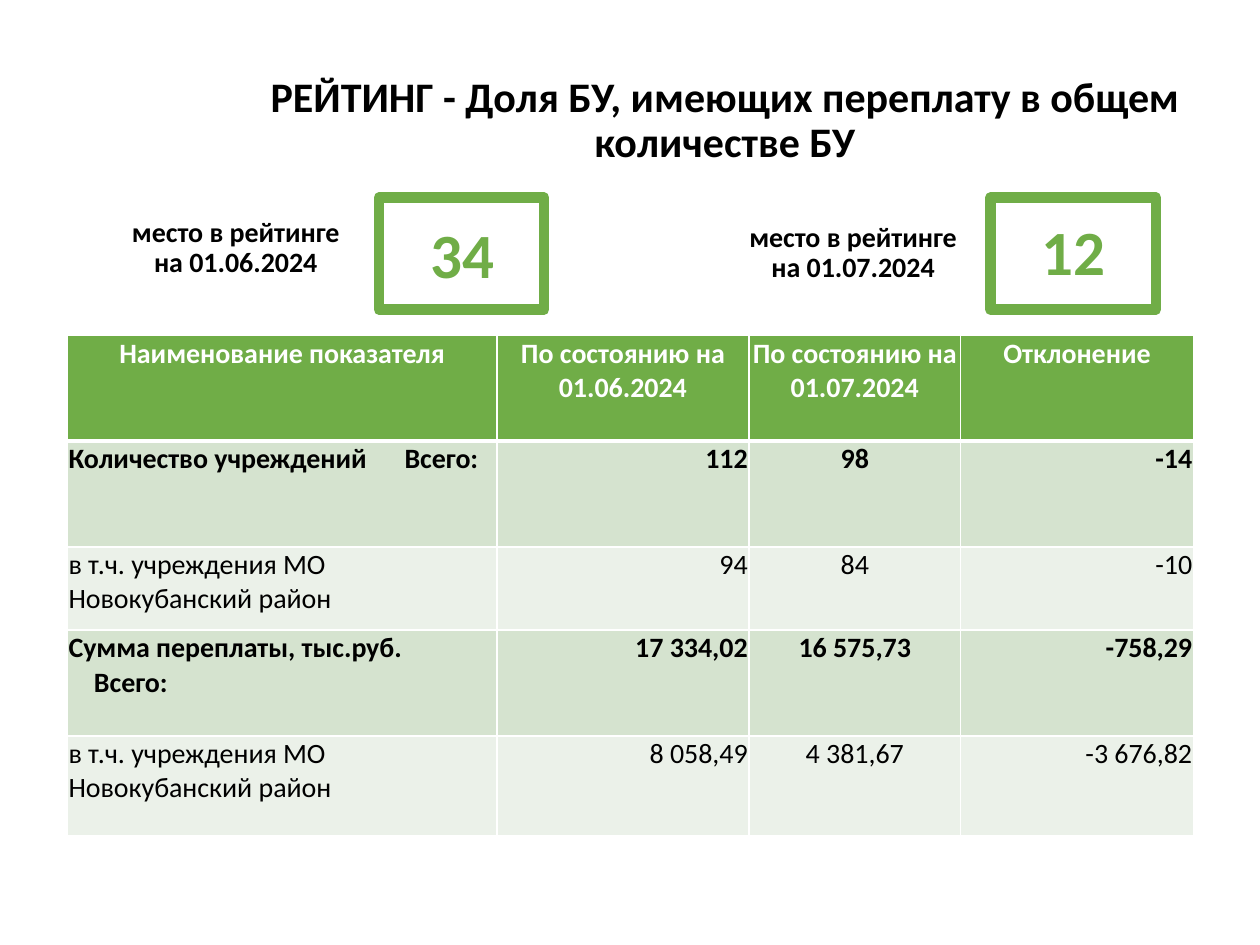
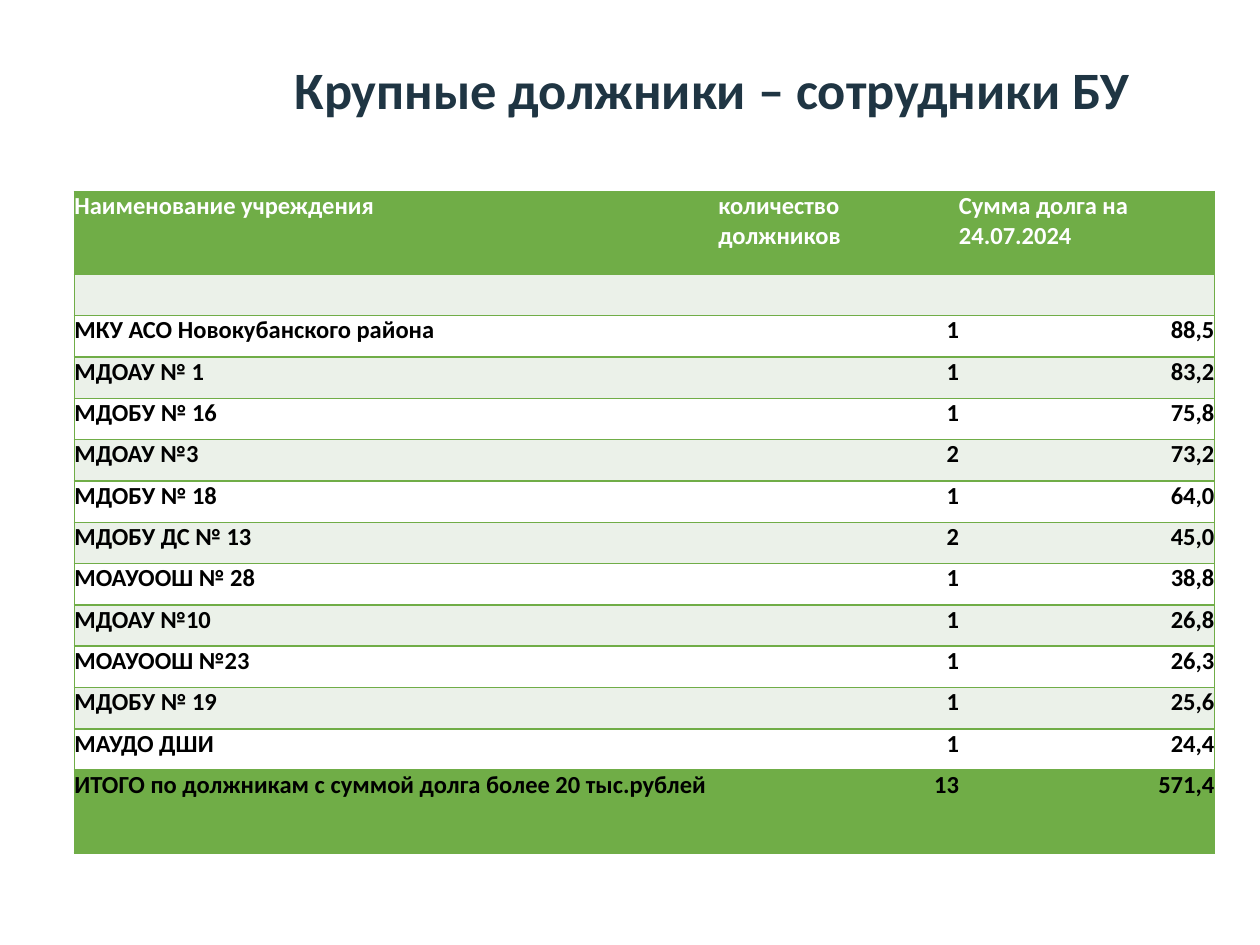
from lxml import etree
from pptx import Presentation
from pptx.dml.color import RGBColor
from pptx.enum.shapes import MSO_SHAPE
from pptx.enum.text import MSO_ANCHOR, MSO_AUTO_SIZE, PP_ALIGN
from pptx.oxml.ns import qn
from pptx.util import Pt

LEFT, CENTER, RIGHT = PP_ALIGN.LEFT, PP_ALIGN.CENTER, PP_ALIGN.RIGHT
MIDDLE, TOP = MSO_ANCHOR.MIDDLE, MSO_ANCHOR.TOP
NO_AUTOFIT = MSO_AUTO_SIZE.NONE
RECTANGLE = MSO_SHAPE.RECTANGLE

GREEN = RGBColor(0x70, 0xAD, 0x47)
BAND = RGBColor(0xD5, 0xE3, 0xCF)
PALE = RGBColor(0xEB, 0xF1, 0xE9)
WHITE = RGBColor(0xFF, 0xFF, 0xFF)
BLACK = RGBColor(0x00, 0x00, 0x00)
NAVY = RGBColor(0x1F, 0x35, 0x43)

FONT = "Calibri"
TITLE_ONLY = 5
PLAIN_TABLE_STYLE = "{2D5ABB26-0587-4C30-8999-92F81FD0307C}"

# Rating table
RATING_WIDTHS = [245.5, 144, 121, 133]
RATING_HEIGHTS = [60.5, 60.5, 47.5, 60.5, 57]
RATING_ALIGNS = [LEFT, RIGHT, CENTER, RIGHT]
RATING_ROWS = [
    ("Наименование показателя", "По состоянию на 01.06.2024",
     "По состоянию на 01.07.2024", "Отклонение"),
    ("Количество учреждений\tВсего:", "112", "98", "-14"),
    ("в т.ч. учреждения МО Новокубанский район", "94", "84", "-10"),
    ("Сумма переплаты, тыс.руб.\v\tВсего:", "17 334,02", "16 575,73", "-758,29"),
    ("в т.ч. учреждения МО Новокубанский район", "8 058,49", "4 381,67", "-3 676,82"),
]
TOTAL_TABS = {1: 192, 3: 14.5}  # row: position of "Всего:"

# Debtors table
DEBTOR_WIDTHS = [368, 137.5, 146]
DEBTOR_ROW_HEIGHT = 23.63
DEBTOR_ROWS = [
    ("Наименование учреждения", "количество должников", "Сумма долга на 24.07.2024"),
    ("", "", ""),
    ("МКУ АСО Новокубанского района", "1", "88,5"),
    ("МДОАУ № 1", "1", "83,2"),
    ("МДОБУ № 16", "1", "75,8"),
    ("МДОАУ №3", "2", "73,2"),
    ("МДОБУ № 18", "1", "64,0"),
    ("МДОБУ ДС № 13", "2", "45,0"),
    ("МОАУООШ № 28", "1", "38,8"),
    ("МДОАУ №10", "1", "26,8"),
    ("МОАУООШ №23", "1", "26,3"),
    ("МДОБУ № 19", "1", "25,6"),
    ("МАУДО ДШИ", "1", "24,4"),
    ("ИТОГО по должникам с суммой долга более 20 тыс.рублей", "13", "571,4"),
]


def apply(target, formats):
    for attribute, value in formats.items():
        setattr(target, attribute, value)


def write(frame, text, size, color, align=LEFT, bold=True, spacing=None):
    frame.text = text
    for paragraph in frame.paragraphs:
        apply(paragraph, {"alignment": align, "line_spacing": spacing})
        for run in paragraph.runs:
            apply(run.font, {"name": FONT, "size": Pt(size), "bold": bold})
            run.font.color.rgb = color


def add_titled_slide(deck, text, left, top, width, height, size, color):
    slide = deck.slides.add_slide(deck.slide_layouts[TITLE_ONLY])
    title = slide.shapes.title
    apply(title, {"left": Pt(left), "top": Pt(top),
                  "width": Pt(width), "height": Pt(height)})
    apply(title.text_frame, {"auto_size": NO_AUTOFIT, "word_wrap": True,
                             "vertical_anchor": MIDDLE})
    write(title.text_frame, text, size, color, CENTER, spacing=0.9)
    return slide


def add_text(slide, text, left, top, width, height, size, color,
             align=LEFT, anchor=TOP, spacing=None):
    box = slide.shapes.add_textbox(Pt(left), Pt(top), Pt(width), Pt(height))
    apply(box.text_frame, {"word_wrap": True, "vertical_anchor": anchor})
    write(box.text_frame, text, size, color, align, spacing=spacing)


def add_rank_frame(slide, left):
    frame = slide.shapes.add_shape(RECTANGLE, Pt(left), Pt(113), Pt(94.5), Pt(64))
    frame.shadow.inherit = False
    frame.fill.background()
    frame.line.color.rgb = GREEN
    frame.line.width = Pt(6)


def add_borders(cell, color, widths):
    """Draw the sides named in widths, in the order L, R, T, B."""
    properties = cell._tc.get_or_add_tcPr()
    for side in "LRTB":
        if side in widths:
            line = etree.SubElement(properties, qn(f"a:ln{side}"),
                                    w=str(Pt(widths[side])))
            fill = etree.SubElement(line, qn("a:solidFill"))
            etree.SubElement(fill, qn("a:srgbClr"), val=str(color))


def add_tab_stop(paragraph, position):
    stops = etree.SubElement(paragraph._p.get_or_add_pPr(), qn("a:tabLst"))
    etree.SubElement(stops, qn("a:tab"), pos=str(Pt(position)), algn="l")


def add_grid(slide, left, top, widths, heights):
    table = slide.shapes.add_table(
        len(heights), len(widths), Pt(left), Pt(top),
        Pt(sum(widths)), Pt(sum(heights))).table
    apply(table, {"first_row": False, "horz_banding": False})
    table._tbl.tblPr.find(qn("a:tableStyleId")).text = PLAIN_TABLE_STYLE
    for column, width in zip(table.columns, widths):
        column.width = Pt(width)
    for row, height in zip(table.rows, heights):
        row.height = Pt(height)
    return table


def fill_cell(cell, text, fill, border_color, borders, inset, **text_format):
    apply(cell, {"margin_left": Pt(inset), "margin_right": Pt(inset),
                 "margin_top": Pt(inset), "margin_bottom": 0})
    add_borders(cell, border_color, borders)
    cell.fill.solid()
    cell.fill.fore_color.rgb = fill
    write(cell.text_frame, text, **text_format)


def add_rating_table(slide):
    table = add_grid(slide, 38.5, 191.5, RATING_WIDTHS, RATING_HEIGHTS)
    for r, texts in enumerate(RATING_ROWS):
        header, total = r == 0, r % 2 == 1
        fill = GREEN if header else BAND if total else PALE
        borders = {"L": 1, "R": 1, "T": 3 if r == 1 else 1, "B": 3 if header else 1}
        for c, text in enumerate(texts):
            fill_cell(table.cell(r, c), text, fill, WHITE, borders, 0.7, size=16,
                      color=WHITE if header else BLACK, bold=header or total,
                      align=CENTER if header else RATING_ALIGNS[c])
    for r, position in TOTAL_TABS.items():
        add_tab_stop(table.cell(r, 0).text_frame.paragraphs[0], position)


def add_debtors_table(slide):
    last = len(DEBTOR_ROWS) - 1
    heights = [DEBTOR_ROW_HEIGHT * (2 if r in (0, last) else 1)
               for r in range(last + 1)]
    table = add_grid(slide, 42.5, 109.5, DEBTOR_WIDTHS, heights)
    outer_sides = {0: {"L": 1}, len(DEBTOR_WIDTHS) - 1: {"R": 1}}
    for r, texts in enumerate(DEBTOR_ROWS):
        header = r == 0
        fill = GREEN if r in (0, last) else PALE if r % 2 else WHITE
        for c, text in enumerate(texts):
            borders = {"T": 1, "B": 1, **outer_sides.get(c, {})}
            fill_cell(table.cell(r, c), text, fill, GREEN, borders, 0, size=14,
                      color=WHITE if header else BLACK,
                      align=LEFT if header or c == 0 else RIGHT)


def main():
    deck = Presentation()
    apply(deck, {"slide_width": Pt(720), "slide_height": Pt(540)})

    # Rating: place on each date, then the indicators
    rating = add_titled_slide(
        deck, "РЕЙТИНГ - Доля БУ, имеющих переплату в общем количестве БУ",
        115, 39, 598.5, 61, 24, BLACK)
    add_rating_table(rating)
    places = [
        ("01.06.2024", 60, 111.5, 149.5, "34", 239, 119.5, 216.5),
        ("01.07.2024", 417, 114.5, 141, "12", 588, 118, 566),
    ]
    for date, left, top, width, place, place_left, place_top, frame_left in places:
        add_text(rating, f"место в рейтинге на {date}", left, top, width, 61,
                 16, BLACK, CENTER, MIDDLE, 0.9)
        add_text(rating, place, place_left, place_top, 63.5, 51, 36, GREEN)
        add_rank_frame(rating, frame_left)

    # Large debtors
    debtors = add_titled_slide(deck, "Крупные должники – сотрудники БУ",
                               101, 21, 612.5, 63.5, 30, NAVY)
    add_debtors_table(debtors)

    deck.save("out.pptx")


if __name__ == "__main__":
    main()
